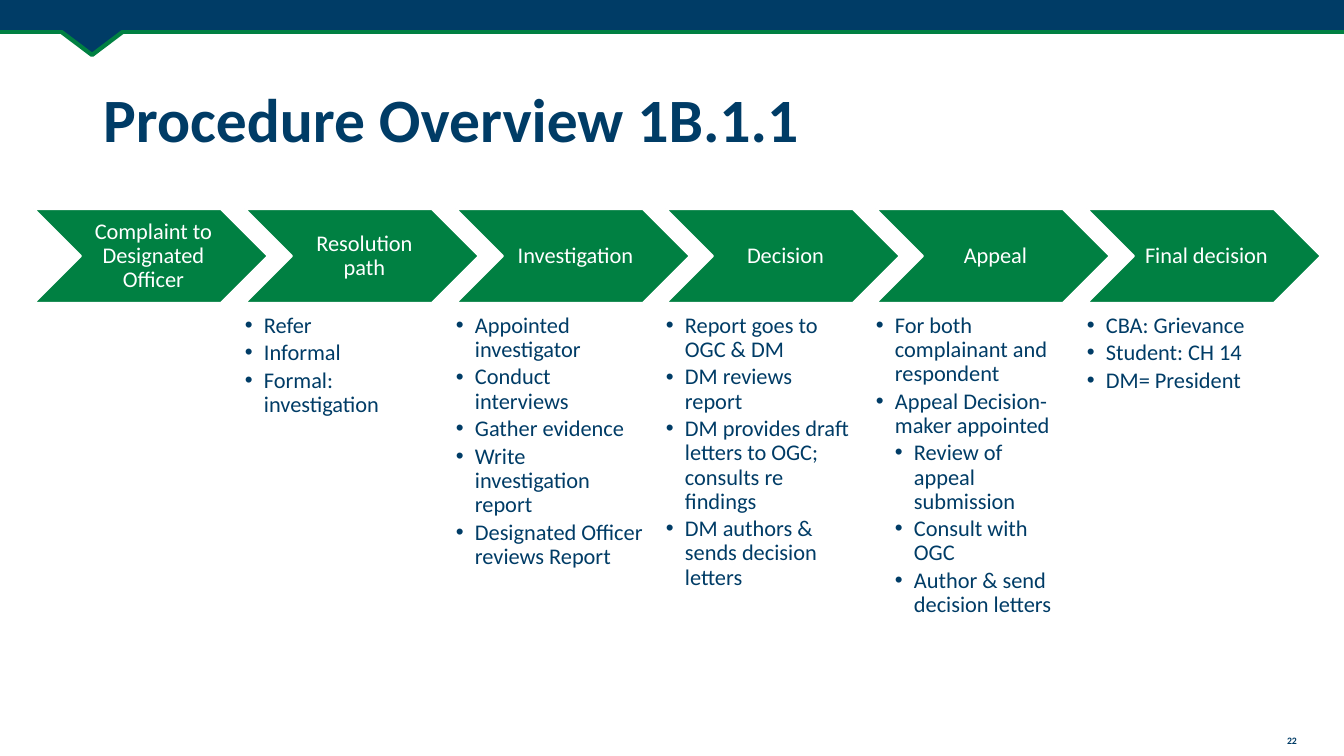
import pptx
import pptx.util
import pptx.dml.color
import pptx.enum.shapes
import pptx.enum.text
import pptx.oxml.ns
import lxml.etree

PX = 9144000 / 1008
COLORS = {"navy": "003C66", "green": "008042", "white": "FFFFFF"}
SHAPE = pptx.enum.shapes.MSO_SHAPE
ALIGN = pptx.enum.text.PP_ALIGN
MIDDLE = pptx.enum.text.MSO_ANCHOR.MIDDLE
qn = pptx.oxml.ns.qn

STEPS = [
    ("Complaint to Designated Officer", []),
    ("Resolution path", [
        (1, "Refer"),
        (1, "Informal"),
        (1, "Formal: investigation"),
    ]),
    ("Investigation", [
        (1, "Appointed investigator"),
        (1, "Conduct interviews"),
        (1, "Gather evidence"),
        (1, "Write investigation report"),
        (1, "Designated Officer reviews Report"),
    ]),
    ("Decision", [
        (1, "Report goes to OGC & DM"),
        (1, "DM reviews report"),
        (1, "DM provides draft letters to OGC; consults re findings"),
        (1, "DM authors & sends decision letters"),
    ]),
    ("Appeal", [
        (1, "For both complainant and respondent"),
        (1, "Appeal Decision-maker appointed"),
        (2, "Review of appeal submission"),
        (2, "Consult with OGC"),
        (2, "Author & send decision letters"),
    ]),
    ("Final decision", [
        (1, "CBA: Grievance"),
        (1, "Student: CH 14"),
        (1, "DM= President"),
    ]),
]


def px(*lengths):
    return [pptx.util.Emu(round(n * PX)) for n in lengths]


def write(p, text, color, size, bold=False, **layout):
    """Add one run to a paragraph and apply its paragraph settings."""
    for name, value in layout.items():
        setattr(p, name, value)
    r = p.add_run()
    r.text = text
    font = {"name": "Calibri", "size": pptx.util.Pt(size), "bold": bold}
    for name, value in font.items():
        setattr(r.font, name, value)
    r.font.color.rgb = pptx.dml.color.RGBColor.from_string(COLORS[color])


prs = pptx.Presentation()
prs.slide_width, prs.slide_height = px(1344, 756)
s = prs.slides.add_slide(prs.slide_layouts[5])
navy, green, white = (
    pptx.dml.color.RGBColor.from_string(COLORS[c]) for c in ("navy", "green", "white")
)

# Header band
rule = s.shapes.add_connector(
    pptx.enum.shapes.MSO_CONNECTOR.STRAIGHT, *px(0, 32, 1344, 32))
rule.line.color.rgb = green
rule.line.width = pptx.util.Pt(3)
lxml.etree.SubElement(rule._element.spPr, qn("a:effectLst"))

notch = s.shapes.add_shape(SHAPE.ISOSCELES_TRIANGLE, *px(39, 15, 106, 40))
notch.rotation = 180
notch.line.color.rgb = green
notch.line.width = pptx.util.Pt(3)
band = s.shapes.add_shape(SHAPE.RECTANGLE, *px(0, 0, 1344, 30))
band.line.fill.background()
for sp in (notch, band):
    sp.shadow.inherit = False
    sp.fill.solid()
    sp.fill.fore_color.rgb = navy

# Title
title = s.shapes.title
title.left, title.top, title.width, title.height = px(93, 50, 1159, 146)
title.text_frame.vertical_anchor = MIDDLE
write(title.text_frame.paragraphs[0], "Procedure Overview 1B.1.1", "navy", 44, True,
      alignment=ALIGN.LEFT, line_spacing=0.9)

# Process steps
for i, (step, items) in enumerate(STEPS):
    left = round(34.5 + 210.5 * i)
    chevron = s.shapes.add_shape(SHAPE.CHEVRON, *px(left, 209, 234, 94))
    chevron.shadow.inherit = False
    chevron.fill.solid()
    chevron.fill.fore_color.rgb = green
    chevron.line.color.rgb = white
    chevron.line.width = pptx.util.Pt(1.5)
    tf = chevron.text_frame
    tf.word_wrap = True
    tf.vertical_anchor = MIDDLE
    tf.margin_left, tf.margin_top, tf.margin_right, tf.margin_bottom = px(7, 2, 2, 2)
    write(tf.paragraphs[0], step, "white", 16, alignment=ALIGN.CENTER, line_spacing=0.9)

    if not items:
        continue
    tf = s.shapes.add_textbox(*px(left, 314, 187, 312)).text_frame
    tf.word_wrap = True
    tf.margin_left = tf.margin_top = tf.margin_right = tf.margin_bottom = 0
    for n, (level, item) in enumerate(items):
        p = tf.add_paragraph() if n else tf.paragraphs[0]
        pPr = p._p.get_or_add_pPr()
        indent, hang = px(19 * level, -19)
        pPr.set("marL", str(indent))
        pPr.set("indent", str(hang))
        lxml.etree.SubElement(pPr, qn("a:buFont"), typeface="Arial")
        lxml.etree.SubElement(pPr, qn("a:buChar"), char="•")
        write(p, item, "navy", 16, level=level, line_spacing=0.9,
              space_after=pptx.util.Pt(2.4))

# Slide number
tf = s.shapes.add_textbox(*px(1267, 730, 50, 22)).text_frame
tf.word_wrap = True
write(tf.paragraphs[0], "22", "navy", 7, True, alignment=ALIGN.CENTER)

prs.save("out.pptx")
